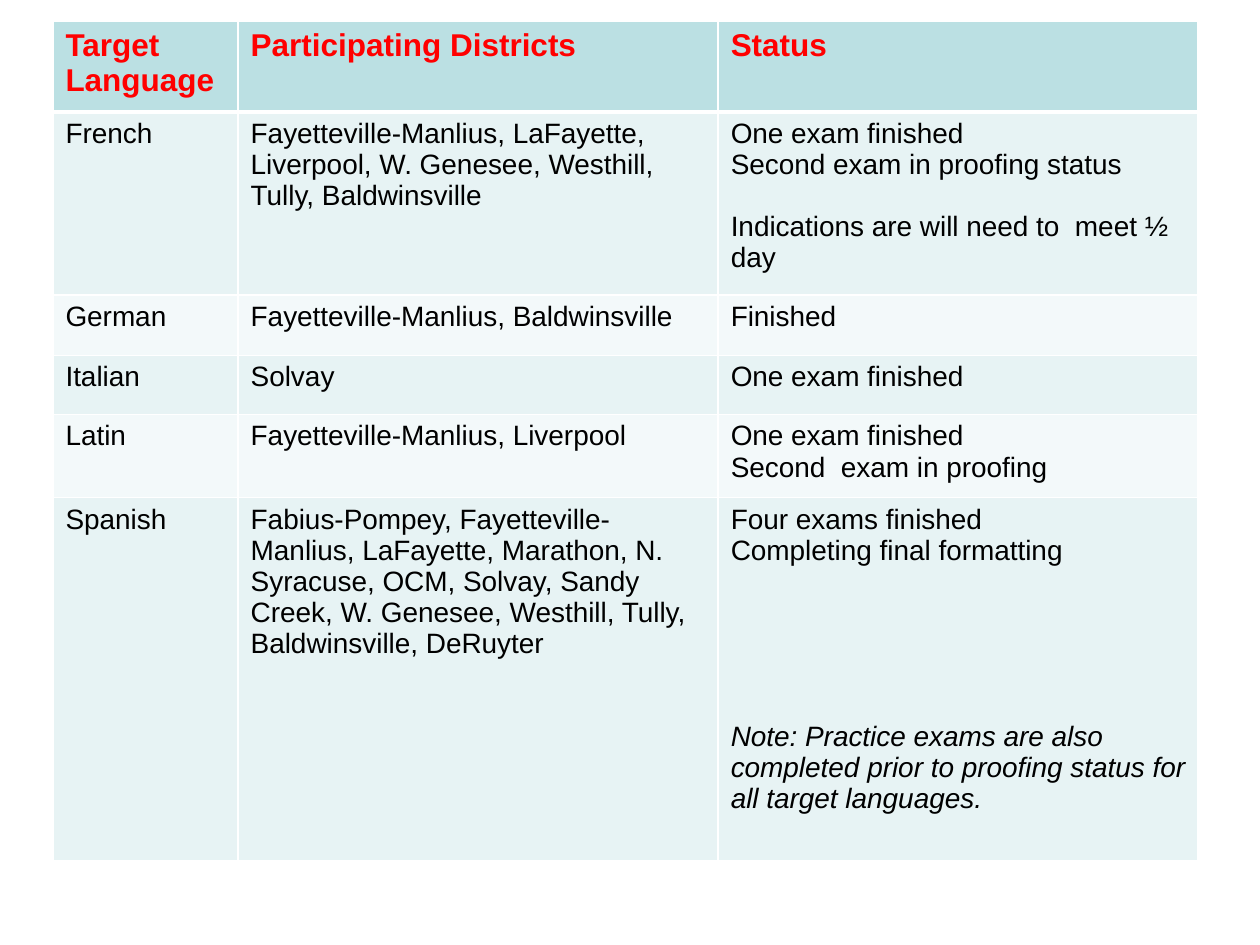
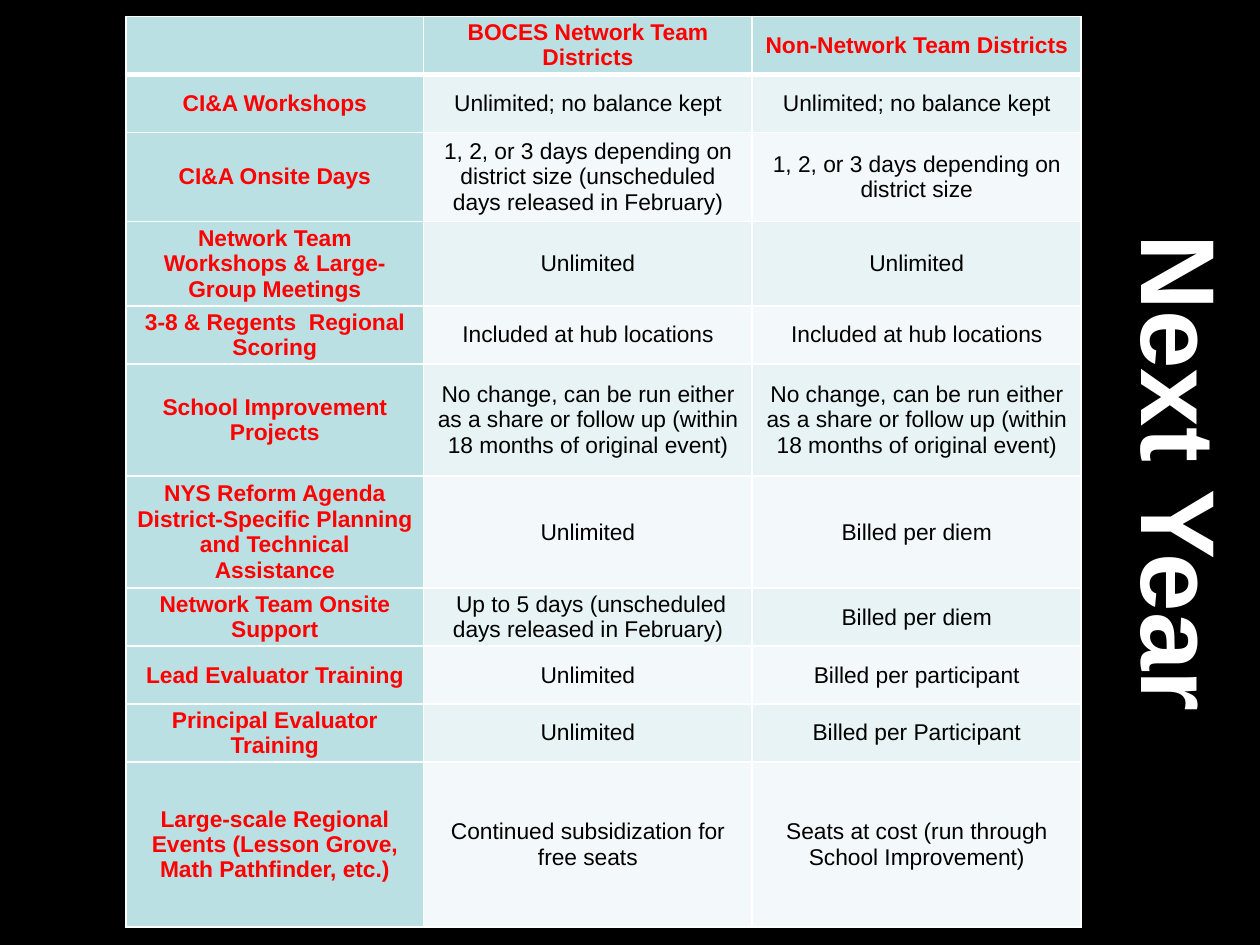
"""Build two slides of tables: exam status by language, and services for next year."""
from dataclasses import dataclass, field
from typing import Any

from lxml.etree import SubElement as Sub
from pptx import Presentation
from pptx.dml.color import RGBColor as Rgb
from pptx.enum.text import MSO_ANCHOR as Anchor, PP_ALIGN as Align
from pptx.oxml.ns import qn
from pptx.util import Inches, Pt

HUES = {"head": "BBE0E3", "odd": "E7F3F4", "even": "F3F9FA",
        "red": "FF0000", "black": "000000", "white": "FFFFFF"}
FONT = "Arial"
GAP = 17.7


@dataclass(frozen=True)
class Line:
    text: str
    gap: float = 0
    slant: bool = False


Cell = str | tuple[Line, ...]


@dataclass(frozen=True)
class Grid:
    left: float
    top: float
    cols: tuple[float, ...]
    highs: tuple[float, ...]
    rows: tuple[tuple[Cell, ...], ...]
    head_size: float
    size: float
    side_head: bool = False
    align: Any = Align.LEFT
    frame: dict[str, Any] = field(default_factory=dict)


EXAMS = Grid(
    0.42, 0.17, (1.47, 3.81, 3.81), (0.72, 1.45, 0.48, 0.47, 0.66, 2.88),
    (
        ("Target Language", "Participating Districts", "Status"),
        ("French",
         "Fayetteville-Manlius, LaFayette, Liverpool, W. Genesee, Westhill, "
         "Tully, Baldwinsville",
         (Line("One exam finished"), Line("Second exam in proofing status"),
          Line("Indications are will need to  meet ½ day", GAP))),
        ("German", "Fayetteville-Manlius, Baldwinsville", "Finished"),
        ("Italian", "Solvay", "One exam finished"),
        ("Latin", "Fayetteville-Manlius, Liverpool",
         (Line("One exam finished"), Line("Second  exam in proofing"))),
        ("Spanish",
         "Fabius-Pompey, Fayetteville-Manlius, LaFayette, Marathon, "
         "N. Syracuse, OCM, Solvay, Sandy Creek, W. Genesee, Westhill, "
         "Tully, Baldwinsville, DeRuyter",
         (Line("Four exams finished"), Line("Completing final formatting"),
          Line("Note: Practice exams are also completed prior to proofing "
               "status for all target languages.", 5 * GAP, True))),
    ),
    head_size=18, size=16,
)

FREE = "Unlimited"
OPEN = "Unlimited; no balance kept"
HUB = "Included at hub locations"
DAYS = "1, 2, or 3 days depending on district size"
LATE = "(unscheduled days released in February)"
SHARE = ("No change, can be run either as a share or follow up "
         "(within 18 months of original event)")
DIEM = "Billed per diem"

PLANS = Grid(
    1, 0.13, (2.36, 2.61, 2.61),
    (0.46, 0.46, 0.71, 0.67, 0.46, 0.89, 0.89, 0.46, 0.46, 0.46, 1.31),
    (
        ("", "BOCES Network Team Districts", "Non-Network Team Districts"),
        ("CI&A Workshops", OPEN, OPEN),
        ("CI&A Onsite Days", f"{DAYS} {LATE}", DAYS),
        ("Network Team Workshops & Large-Group Meetings", FREE, FREE),
        ("3-8 & Regents  Regional Scoring", HUB, HUB),
        ("School Improvement Projects", SHARE, SHARE),
        ("NYS Reform Agenda District-Specific Planning and Technical "
         "Assistance", FREE, DIEM),
        ("Network Team Onsite Support", f" Up to 5 days {LATE}", DIEM),
        ("Lead Evaluator Training", FREE, "Billed per participant"),
        ("Principal Evaluator Training", FREE, "Billed per Participant"),
        ("Large-scale Regional Events (Lesson Grove, Math Pathfinder, etc.)",
         "Continued subsidization for free seats",
         "Seats at cost (run through School Improvement)"),
    ),
    head_size=13, size=13, side_head=True, align=Align.CENTER,
    frame={"vertical_anchor": Anchor.MIDDLE,
           "margin_left": Inches(0.09), "margin_right": Inches(0.09),
           "margin_top": 0, "margin_bottom": 0},
)


def assign(item: Any, forms: dict[str, Any]) -> None:
    """Set each named attribute of an item."""
    for name, value in forms.items():
        setattr(item, name, value)


def write(para: Any, line: Line, hue: str, size: float, bold: bool, align: Any) -> None:
    """Put one styled line in a paragraph."""
    assign(para, {"alignment": align, "space_before": Pt(line.gap)})
    run = para.add_run()
    run.text = line.text
    assign(run.font, {"name": FONT, "size": Pt(size), "bold": bold,
                      "italic": line.slant})
    run.font.color.rgb = Rgb.from_string(HUES[hue])


def edge(cell: Any, row: int) -> None:
    """Rule a cell in white, with a thick line below the header."""
    wide = {"L": 1, "R": 1, "T": 3 if row == 1 else 1, "B": 3 if row == 0 else 1}
    props = cell._tc.get_or_add_tcPr()
    for side, width in wide.items():
        rule = Sub(props, qn(f"a:ln{side}"), w=str(Pt(width)))
        Sub(Sub(rule, qn("a:solidFill")), qn("a:srgbClr"), val=HUES["white"])


def add_grid(slide: Any, grid: Grid) -> None:
    """Draw a banded table."""
    box = [Inches(n) for n in (grid.left, grid.top, sum(grid.cols), sum(grid.highs))]
    table = slide.shapes.add_table(len(grid.rows), len(grid.cols), *box).table
    table.horz_banding = False
    for col, width in zip(table.columns, grid.cols):
        col.width = Inches(width)
    for row, high in zip(table.rows, grid.highs):
        row.height = Inches(high)
    for r, row in enumerate(grid.rows):
        for c, words in enumerate(row):
            cell = table.cell(r, c)
            top = r == 0 or (grid.side_head and c == 0)
            assign(cell, grid.frame)
            edge(cell, r)
            cell.fill.solid()
            band = "head" if top else ("even", "odd")[r % 2]
            cell.fill.fore_color.rgb = Rgb.from_string(HUES[band])
            lines = (Line(words),) if isinstance(words, str) else words
            for n, line in enumerate(lines):
                if line.text:
                    text = cell.text_frame
                    para = text.add_paragraph() if n else text.paragraphs[0]
                    write(para, line, "red" if top else "black",
                          grid.head_size if top else grid.size, top, grid.align)


def add_title(slide: Any, words: str) -> None:
    """Draw the title that runs down the right side."""
    box = slide.shapes.add_textbox(Inches(4.98), Inches(3.27), Inches(8.83), Inches(0.97))
    box.rotation = 90
    assign(box.text_frame, {"word_wrap": True, "vertical_anchor": Anchor.MIDDLE})
    write(box.text_frame.paragraphs[0], Line(words), "white", 60, True, Align.CENTER)


def add_slide(deck: Any, hue: str, grid: Grid) -> Any:
    """Add a blank slide with a plain ground and a table."""
    slide = deck.slides.add_slide(deck.slide_layouts[6])
    slide.background.fill.solid()
    slide.background.fill.fore_color.rgb = Rgb.from_string(HUES[hue])
    add_grid(slide, grid)
    return slide


def main() -> None:
    """Build and save the deck."""
    deck = Presentation()
    assign(deck, {"slide_width": Inches(10), "slide_height": Inches(7.5)})
    add_slide(deck, "white", EXAMS)
    add_title(add_slide(deck, "black", PLANS), "Next Year")
    deck.save("out.pptx")


if __name__ == "__main__":
    main()
